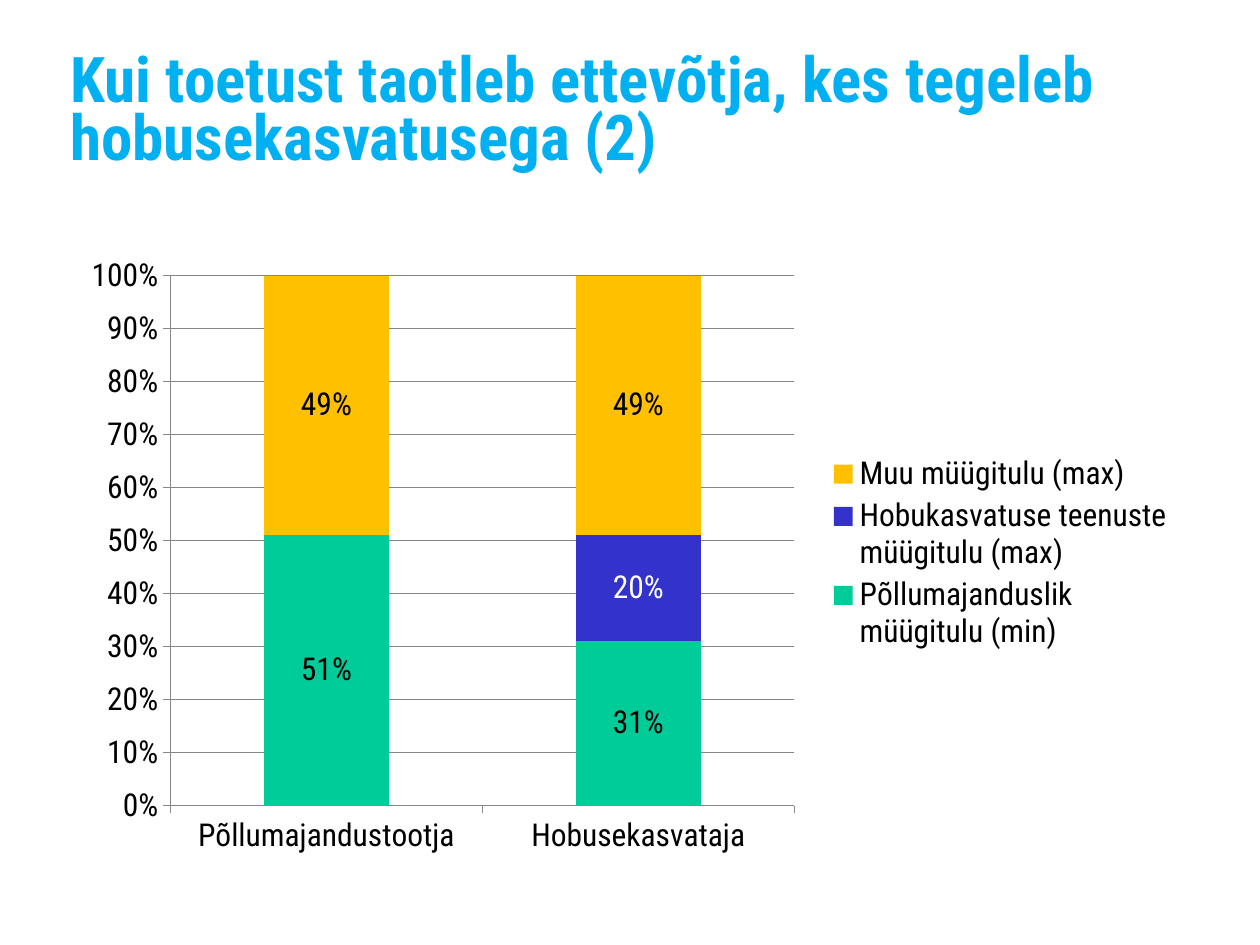
from lxml import etree
from pptx import Presentation
from pptx import util as u
from pptx.chart.data import CategoryChartData
from pptx.dml.color import RGBColor
from pptx.enum import chart as charts, text
from pptx.oxml import ns

TITLE = "Kui toetust taotleb ettevõtja, kes tegeleb hobusekasvatusega (2)"
CATEGORIES = ["Põllumajandustootja", "Hobusekasvataja"]
# name, values, fill, label colour
INCOME_SERIES = [
    ("Põllumajanduslik müügitulu (min)", (0.51, 0.31), "00CC99", "000000"),
    ("Hobukasvatuse teenuste müügitulu (max)", (0, 0.2), "3333CC", "FFFFFF"),
    ("Muu müügitulu (max)", (0.49, 0.49), "FFC000", "000000"),
]


def color(value):
    return RGBColor.from_string(value)


def apply(target, values):
    for name, value in values.items():
        setattr(target, name, value)


def set_layout(parent, index, fractions, inner=False):
    """Place a chart part by x, y, w, h as fractions of the chart area."""
    for old in parent.findall(ns.qn("c:layout")):
        parent.remove(old)
    layout = etree.Element(ns.qn("c:layout"))
    manual = etree.SubElement(layout, ns.qn("c:manualLayout"))
    settings = [("layoutTarget", "inner")] if inner else []
    settings += [("xMode", "edge"), ("yMode", "edge")]
    settings += zip("xywh", fractions)
    for tag, value in settings:
        etree.SubElement(manual, ns.qn("c:" + tag)).set("val", str(value))
    parent.insert(index, layout)


class SlideBuilder:
    font_name = "Roboto Condensed"
    line_color = "868686"

    def __init__(self, slide):
        self.slide = slide

    def format_font(self, font, size, fill, bold=False):
        apply(font, {"name": self.font_name, "size": u.Pt(size), "bold": bold})
        font.color.rgb = color(fill)

    def title(self, wording, left, top, width, height):
        shape = self.slide.shapes.title
        apply(shape, {"left": left, "top": top, "width": width, "height": height})
        frame = shape.text_frame
        apply(frame, {
            "margin_left": 0, "margin_right": 0, "margin_bottom": 0,
            "margin_top": u.Cm(0.28), "word_wrap": True,
            "auto_size": text.MSO_AUTO_SIZE.NONE,
            "vertical_anchor": text.MSO_ANCHOR.TOP,
        })
        paragraph = frame.paragraphs[0]
        apply(paragraph, {"alignment": text.PP_ALIGN.LEFT, "line_spacing": 0.77})
        run = paragraph.add_run()
        run.text = wording
        self.format_font(run.font, 36, "00B0F0", bold=True)

    def stacked_chart(self, categories, series_rows, *box):
        data = CategoryChartData(number_format="0%")
        data.categories = categories
        for name, values, *_ in series_rows:
            data.add_series(name, values)
        chart = self.slide.shapes.add_chart(
            charts.XL_CHART_TYPE.COLUMN_STACKED_100, *box, data).chart
        apply(chart, {"has_title": False, "has_legend": True})
        self.format_font(chart.font, 18, "000000")
        self.format_plot(chart.plots[0], series_rows)
        self.format_axes(chart)
        apply(chart.legend, {"position": charts.XL_LEGEND_POSITION.RIGHT,
                             "include_in_layout": False})
        plot_area = chart.plots[0]._element.getparent()
        set_layout(plot_area, 0, (0.09, 0.05, 0.56, 0.85), inner=True)
        set_layout(chart.legend._element, 1, (0.68, 0.33, 0.31, 0.33))

    def format_plot(self, plot, series_rows):
        apply(plot, {"gap_width": 150, "overlap": 100, "vary_by_categories": False})
        for series, (_, _, fill, label_color) in zip(plot.series, series_rows):
            series.format.fill.solid()
            series.format.fill.fore_color.rgb = color(fill)
            labels = series.data_labels
            # The empty sections of the format hide the label of a zero value
            apply(labels, {"show_value": True, "number_format": "0%;;",
                           "number_format_is_linked": False,
                           "position": charts.XL_LABEL_POSITION.CENTER})
            self.format_font(labels.font, 18, label_color)

    def format_axes(self, chart):
        value_axis = chart.value_axis
        apply(value_axis, {"minimum_scale": 0, "maximum_scale": 1,
                           "major_unit": 0.1, "has_major_gridlines": True})
        apply(value_axis.tick_labels, {"number_format": "0%",
                                       "number_format_is_linked": False})
        for axis in (value_axis, chart.category_axis):
            axis.major_tick_mark = charts.XL_TICK_MARK.OUTSIDE
            axis.format.line.color.rgb = color(self.line_color)
        gridlines = value_axis.major_gridlines.format.line
        gridlines.color.rgb = color(self.line_color)


def main():
    presentation = Presentation()
    apply(presentation, {"slide_width": u.Cm(25.4), "slide_height": u.Cm(19.05)})
    slide = presentation.slides.add_slide(
        presentation.slide_layouts.get_by_name("Title Only"))
    builder = SlideBuilder(slide)
    left, width = u.Cm(1.42), u.Cm(22.45)
    builder.title(TITLE, left, u.Cm(0.84), width, u.Cm(3.5))
    builder.stacked_chart(CATEGORIES, INCOME_SERIES,
                          left, u.Cm(4.93), width, u.Cm(12.57))
    presentation.save("out.pptx")


if __name__ == "__main__":
    main()
